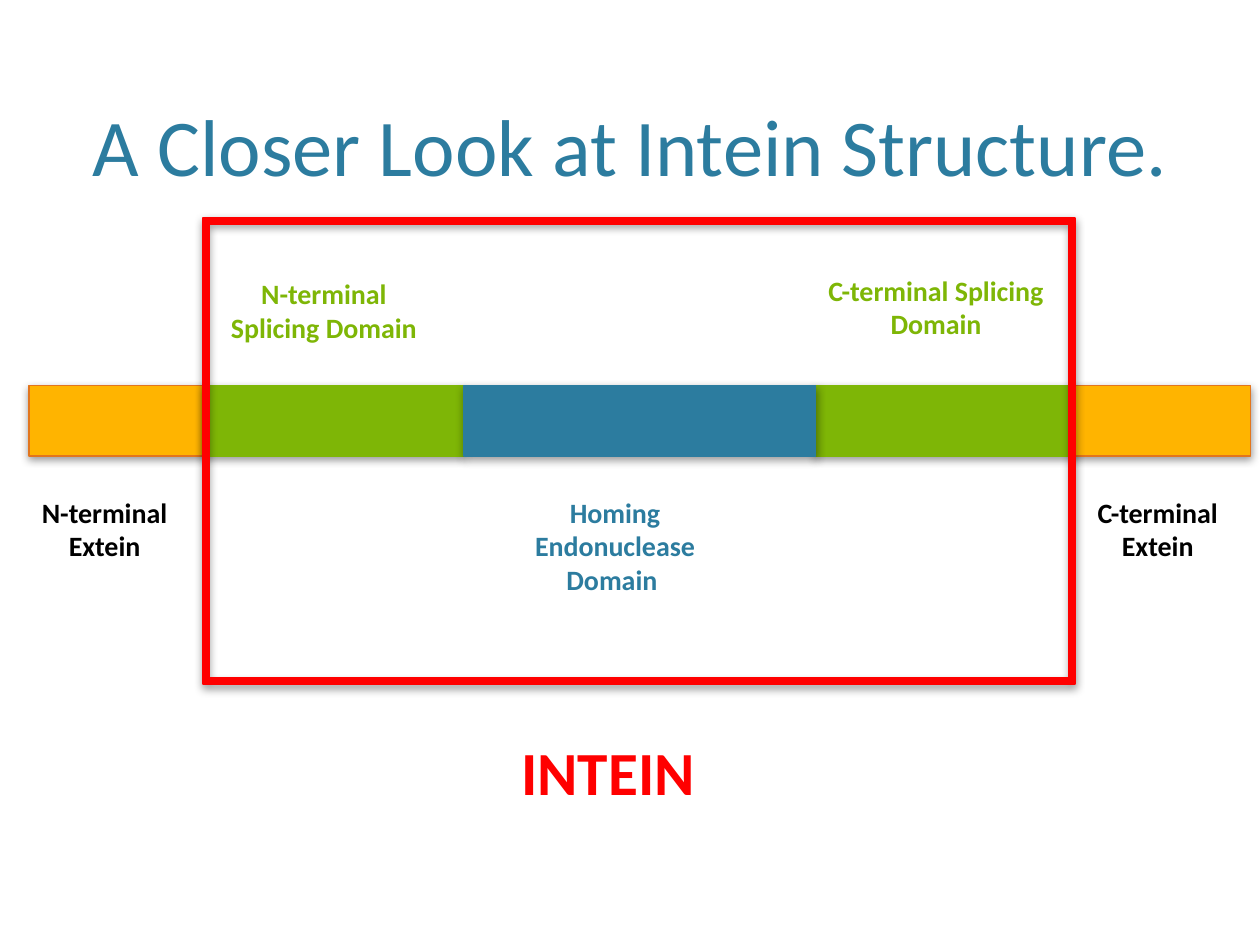
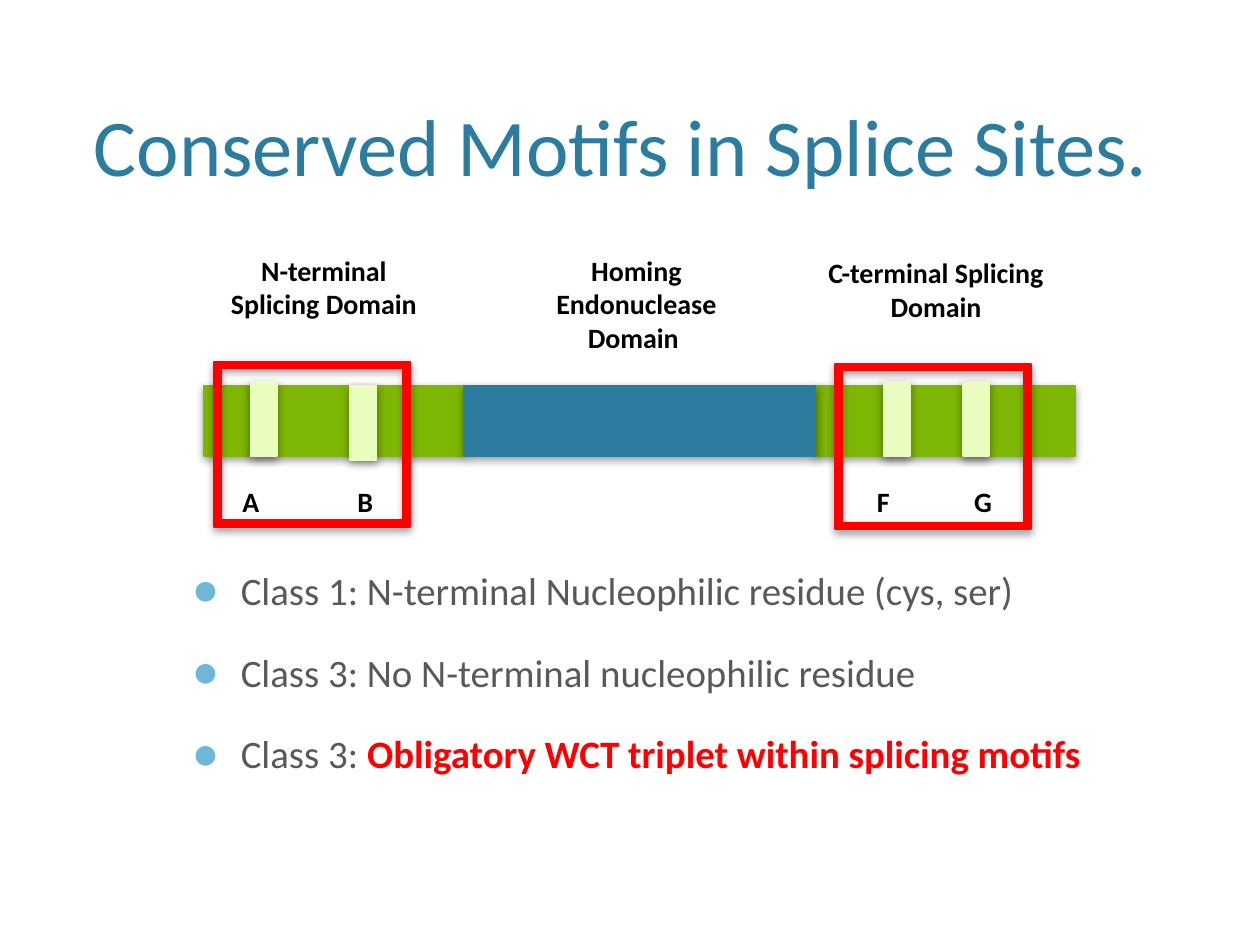
from itertools import accumulate
from lxml.etree import SubElement
from pptx import Presentation
from pptx.dml.color import RGBColor
from pptx.enum.shapes import MSO_SHAPE
from pptx.enum.text import MSO_ANCHOR, MSO_AUTO_SIZE, PP_ALIGN
from pptx.oxml.ns import qn
from pptx.util import Cm, Pt

FONT = "Calibri"
COLORS = {
    "blue": "2C7C9F", "green": "7EB606", "yellow": "FFB400", "orange": "E2751D",
    "red": "FF0000", "black": "000000", "pale": "EAFDC1", "gray": "595959", "bullet": "6FB7D7",
}

BAR_LEFT, BAR_TOP, BAR_HEIGHT = 0.58, 7.77, 1.42
DOMAINS = [
    ("yellow", "orange", 3.53),
    ("green", "green", 5.24),
    ("blue", "blue", 7.09),
    ("green", "green", 5.24),
    ("yellow", "orange", 3.53),
]
LABEL_WIDTH = 4.88
N_DOMAIN = "N-terminal Splicing Domain"
C_DOMAIN = "C-terminal Splicing Domain"
HOMING = "Homing Endonuclease Domain "

STRUCTURE = {
    "title": "A Closer Look at Intein Structure. ",
    "labels": [
        ("N-terminal\nExtein", -0.33, 9.86, 1.63, "black", 16),
        (N_DOMAIN, 4.09, 5.46, 2.31, "green", 16),
        (C_DOMAIN, 16.43, 5.38, 2.31, "green", 16),
        ("C-terminal\nExtein", 20.9, 9.86, 1.63, "black", 16),
        (HOMING, 9.96, 9.86, 2.31, "blue", 16),
        ("INTEIN ", 9.96, 14.68, 1.75, "red", 35),
    ],
    "frames": [(4.09, 4.39, 17.58, 9.4, 0.013)],
}
MOTIFS = {
    "title": "Conserved Motifs in Splice Sites. ",
    "labels": [
        (N_DOMAIN, 4.09, 4.98, 2.31, "black", 16),
        (C_DOMAIN, 16.43, 5.03, 2.31, "black", 16),
        (HOMING, 10.39, 4.98, 2.31, "black", 16),
    ],
    "sites": [
        ("A", 5.05, 7.7, 4.32),
        ("B", 7.06, 7.77, 6.63),
        ("F", 17.81, 7.7, 17.07),
        ("G", 19.41, 7.7, 19.08),
    ],
    "frames": [(4.32, 7.29, 3.94, 3.33, 0.039), (16.84, 7.34, 3.94, 3.33, 0.039)],
    "bullets": [
        [("Class 1: N-terminal Nucleophilic residue (cys, ser)", "gray", False)],
        [("Class 3: No N-terminal nucleophilic residue", "gray", False)],
        [("Class 3: ", "gray", False),
         ("Obligatory WCT triplet within splicing motifs", "red", True)],
    ],
}


def rgb(name):
    return RGBColor.from_string(COLORS[name])


def style_run(r, size, color, bold=False):
    r.font.name = FONT
    r.font.size = Pt(size)
    r.font.bold = bold
    r.font.color.rgb = rgb(color)


def style_text(tf, size, color, bold=False):
    for p in tf.paragraphs:
        p.alignment = PP_ALIGN.CENTER
        for r in p.runs:
            style_run(r, size, color, bold)


def place(sp, left, top, width, height):
    sp.left, sp.top, sp.width, sp.height = Cm(left), Cm(top), Cm(width), Cm(height)


def add_shadow(sp):
    sp.shadow.inherit = False
    effects = sp._element.spPr.find(qn("a:effectLst"))
    shadow = SubElement(effects, qn("a:outerShdw"), blurRad=str(Pt(5)), dist=str(Pt(2)),
                        dir="5400000", rotWithShape="0")
    color = SubElement(shadow, qn("a:srgbClr"), val=COLORS["black"])
    SubElement(color, qn("a:alpha"), val="40000")


def add_block(s, box, fill, line, kind=MSO_SHAPE.RECTANGLE):
    sp = s.shapes.add_shape(kind, *map(Cm, box))
    sp.fill.solid()
    sp.fill.fore_color.rgb = rgb(fill)
    sp.line.color.rgb = rgb(line)
    sp.line.width = Pt(1)
    add_shadow(sp)
    return sp


def add_label(s, text, left, top, height, color="black", size=16, width=LABEL_WIDTH):
    tf = s.shapes.add_textbox(Cm(left), Cm(top), Cm(width), Cm(height)).text_frame
    tf.word_wrap = True
    tf.text = text
    style_text(tf, size, color, True)


def add_title(s, text):
    sp = s.shapes.title
    place(sp, 1.52, 0.3, 22.35, 3.71)
    tf = sp.text_frame
    tf.text = text
    tf.vertical_anchor = MSO_ANCHOR.BOTTOM
    tf.auto_size = MSO_AUTO_SIZE.NONE
    style_text(tf, 46, "blue")


def add_bar(s, first, last):
    lefts = accumulate([width for _, _, width in DOMAINS], initial=BAR_LEFT)
    bar = list(zip(lefts, DOMAINS))[first:last]
    for left, (fill, line, width) in sorted(bar, key=lambda part: part[1][0] == "blue"):
        add_block(s, (left, BAR_TOP, width, BAR_HEIGHT), fill, line)


def add_frames(s, frames):
    for *box, thickness in frames:
        sp = add_block(s, box, "red", "red", MSO_SHAPE.FRAME)
        sp.adjustments[0] = thickness


def add_bullets(s, items):
    sp = s.placeholders[1]
    place(sp, 3.63, 11.3, 19.76, 5.92)
    tf = sp.text_frame
    tf.auto_size = MSO_AUTO_SIZE.NONE
    for i, parts in enumerate(items):
        p = tf.paragraphs[0] if i == 0 else tf.add_paragraph()
        p.space_before = Pt(20)
        for text, color, bold in parts:
            r = p.add_run()
            r.text = text
            style_run(r, 22.2, color, bold)
        pPr = p._p.get_or_add_pPr()
        pPr.set("marL", str(Cm(0.97)))
        pPr.set("indent", str(Cm(-0.97)))
        SubElement(SubElement(pPr, qn("a:buClr")), qn("a:srgbClr"), val=COLORS["bullet"])
        SubElement(pPr, qn("a:buSzPct"), val="110000")
        SubElement(pPr, qn("a:buFont"), typeface=FONT)
        SubElement(pPr, qn("a:buChar"), char="●")


def add_diagram(prs, layout, content, first, last):
    s = prs.slides.add_slide(prs.slide_layouts[layout])
    add_title(s, content["title"])
    add_bar(s, first, last)
    for label in content["labels"]:
        add_label(s, *label)
    for name, left, top, label_left in content.get("sites", []):
        add_block(s, (left, top, 0.53, 1.5), "pale", "pale")
        add_label(s, name, label_left, 9.65, 0.94, width=1.47)
    add_frames(s, content["frames"])
    return s


def main():
    prs = Presentation()
    prs.slide_width, prs.slide_height = Cm(25.4), Cm(19.05)
    add_diagram(prs, 5, STRUCTURE, 0, 5)
    s = add_diagram(prs, 1, MOTIFS, 1, 4)
    add_bullets(s, MOTIFS["bullets"])
    prs.save("out.pptx")


if __name__ == "__main__":
    main()
